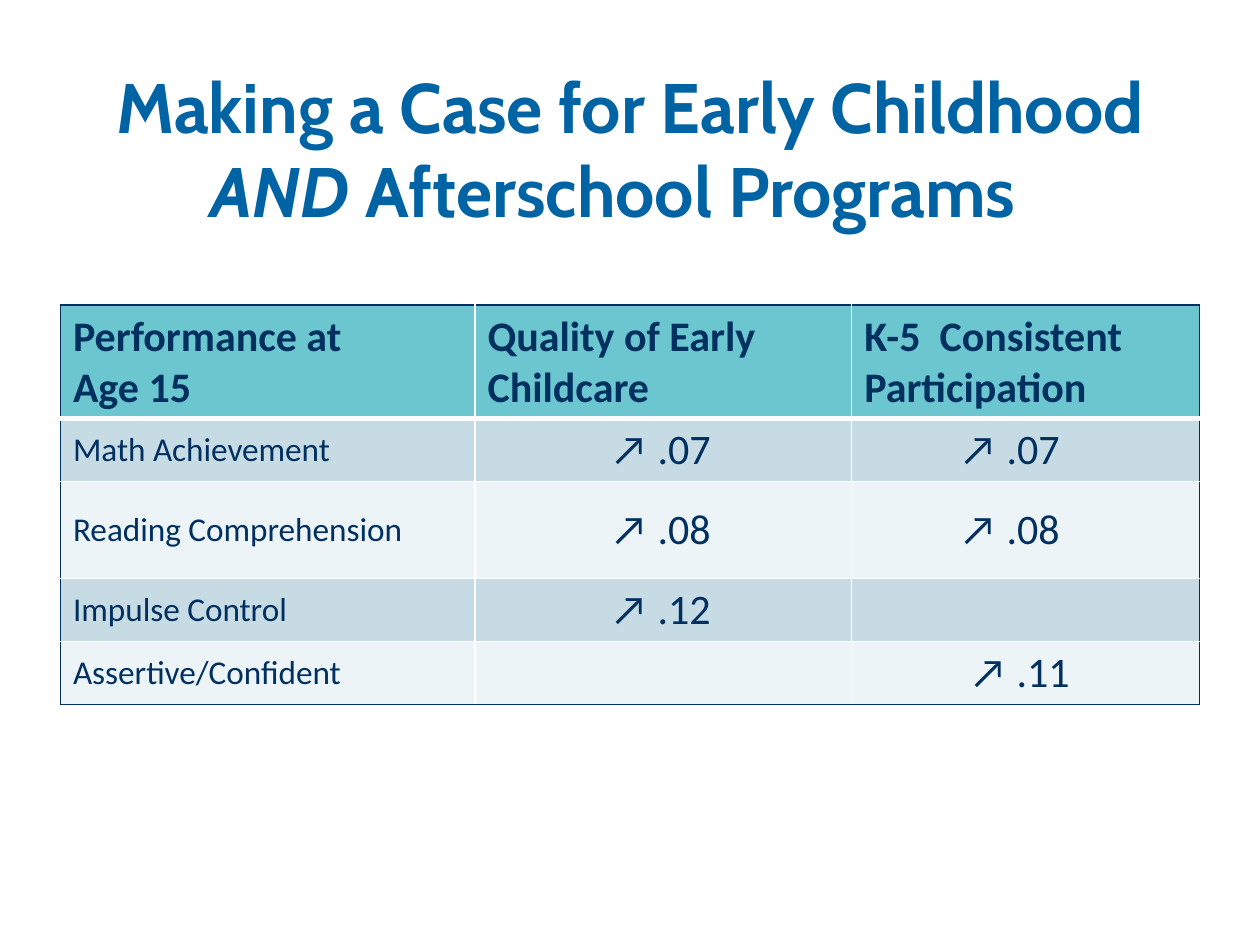
from pptx import Presentation
from pptx.dml.color import RGBColor
from pptx.enum.text import MSO_ANCHOR, PP_ALIGN
from pptx.oxml.ns import qn
from pptx.util import Inches, Pt
from lxml import etree

CENTER, MIDDLE, TOP = PP_ALIGN.CENTER, MSO_ANCHOR.MIDDLE, MSO_ANCHOR.TOP
BLUE, NAVY, WHITE = "0064A4", "003060", "FFFFFF"
HEADER, BANDS = "6BC6CF", ("C6DBE4", "EDF4F7")

COLS = (3.29, 2.99, 2.76)
ROWS = (0.9, 0.5, 0.77, 0.5, 0.5)
MARGIN = 0.1
VALUE_INDENTS = (0, 0.98, 0.76)
HEADINGS = ("Performance at\nAge 15", "Quality of Early Childcare",
            "K-5  Consistent Participation")
RESULTS = (
    ("Math Achievement", "↗ .07", "↗ .07"),
    ("Reading Comprehension", "↗ .08", "↗ .08"),
    ("Impulse Control", "↗ .12", ""),
    ("Assertive/Confident", "", "↗ .11"),
)


def rgb(value):
    return RGBColor.from_string(value)


def add_run(p, text, font="Calibri", size=24, color=NAVY, bold=False, italic=False):
    r = p.add_run()
    r.text = text
    f = r.font
    f.name, f.size, f.bold, f.italic = font, Pt(size), bold, italic
    f.color.rgb = rgb(color)


def set_border(cell, side, color, width):
    pr = cell._tc.get_or_add_tcPr()
    ln = etree.SubElement(pr, qn(f"a:ln{side}"), w=str(Pt(width)))
    fill = etree.SubElement(ln, qn("a:solidFill"))
    etree.SubElement(fill, qn("a:srgbClr"), val=color)


def add_title(s, left, top, width, height):
    tf = s.shapes.add_textbox(*map(Inches, (left, top, width, height))).text_frame
    tf.word_wrap = True
    tf.vertical_anchor = MIDDLE
    style = dict(font="Cabin", size=40, color=BLUE, bold=True)
    first, second = tf.paragraphs[0], tf.add_paragraph()
    first.alignment = second.alignment = CENTER
    add_run(first, "Making a Case for Early Childhood", **style)
    add_run(second, "AND", italic=True, **style)
    add_run(second, " Afterschool Programs", **style)
    # A right indent sets the second line a little left of centre
    second._p.get_or_add_pPr().set("marR", str(Inches(0.27)))


def fill_cell(cell, text, row, col):
    is_header, last_row, last_col = row == 0, len(ROWS) - 1, len(COLS) - 1
    cell.vertical_anchor = TOP if is_header else MIDDLE
    indent = 0 if is_header else VALUE_INDENTS[col]
    if row == last_row and col == last_col:
        indent += 0.08
    cell.margin_left = Inches(MARGIN + indent)
    size = 19 if col == 0 and not is_header else 24
    tf = cell.text_frame
    for i, line in enumerate(text.split("\n") if text else ()):
        p = tf.add_paragraph() if i else tf.paragraphs[0]
        add_run(p, line, size=size, bold=is_header)

    # Navy on the outer edge, white inside, thicker under the header
    set_border(cell, "L", NAVY if col == 0 else WHITE, 1)
    set_border(cell, "R", NAVY if col == last_col else WHITE, 1)
    set_border(cell, "T", NAVY if is_header else WHITE, 3 if row == 1 else 1)
    set_border(cell, "B", NAVY if row == last_row else WHITE, 3 if is_header else 1)
    cell.fill.solid()
    cell.fill.fore_color.rgb = rgb(HEADER if is_header else BANDS[(row - 1) % 2])


def add_results_table(s, left, top):
    box = map(Inches, (left, top, sum(COLS), sum(ROWS)))
    table = s.shapes.add_table(len(ROWS), len(COLS), *box).table
    for column, width in zip(table.columns, COLS):
        column.width = Inches(width)
    for row, height in zip(table.rows, ROWS):
        row.height = Inches(height)
    for r, texts in enumerate((HEADINGS, *RESULTS)):
        for c, text in enumerate(texts):
            fill_cell(table.cell(r, c), text, r, c)


def main():
    prs = Presentation()
    prs.slide_width, prs.slide_height = Inches(10), Inches(7.5)
    s = prs.slides.add_slide(prs.slide_layouts[6])
    add_title(s, 0.67, 0.42, 8.66, 1.5)
    add_results_table(s, 0.48, 2.42)
    prs.save("out.pptx")


if __name__ == "__main__":
    main()
